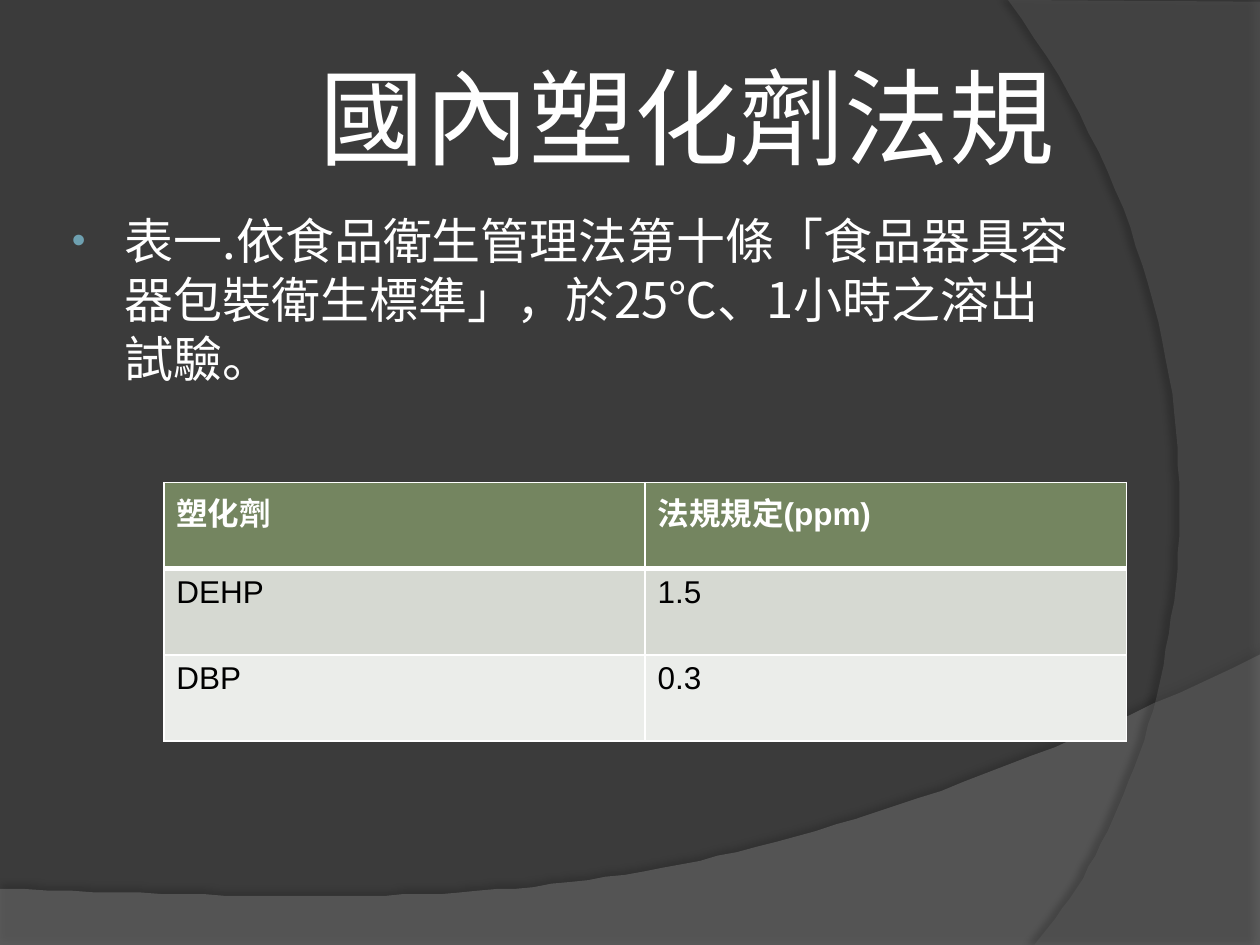
"""Build a slide on domestic plasticizer regulations with a table of limits."""
from lxml import etree
from pptx import Presentation
from pptx.dml.color import RGBColor
from pptx.enum import text
from pptx.oxml import ns
from pptx.util import Pt

CJK_FONT = "Noto Sans CJK SC"
LATIN_FONT = "Arial"
WHITE = RGBColor(0xFF, 0xFF, 0xFF)
BLACK = RGBColor(0, 0, 0)
BACKGROUND = RGBColor(0x3B, 0x3B, 0x3B)
FLOOR = RGBColor(0x7F, 0x7F, 0x7F)
SIDE = RGBColor(0x5E, 0x5E, 0x5E)
BULLET = RGBColor(0x6E, 0xA0, 0xB0)
HEADER = RGBColor(0x74, 0x85, 0x60)
BANDS = [RGBColor(0xD6, 0xD9, 0xD2), RGBColor(0xEB, 0xED, 0xEA)]

TITLE = "國內塑化劑法規"
BODY = "表一.依食品衛生管理法第十條「食品器具容器包裝衛生標準」，於25℃、1小時之溶出試驗。"
LIMITS = [("塑化劑", "法規規定(ppm)"), ("DEHP", "1.5"), ("DBP", "0.3")]


def add_node(parent, tag, **attributes):
    """Append a DrawingML element to a parent."""
    node = etree.SubElement(parent, ns.qn(tag))
    for name, value in attributes.items():
        node.set(name, str(value))
    return node


def curve(start, first, second, end, steps=60):
    """Return points along a cubic curve."""
    points = []
    for step in range(steps + 1):
        t = step / steps
        weights = ((1 - t) ** 3, 3 * t * (1 - t) ** 2, 3 * t * t * (1 - t), t ** 3)
        controls = (start, first, second, end)
        points.append(tuple(sum(w * c[axis] for w, c in zip(weights, controls))
                            for axis in (0, 1)))
    return points


def add_swoosh(page, index, points, color, opacity, shadow):
    """Draw a translucent curved area behind the placeholders."""
    builder = page.shapes.build_freeform(*points[0], scale=float(Pt(1)))
    builder.add_line_segments(points[1:], close=True)
    shape = builder.convert_to_shape()
    shape.fill.solid()
    shape.fill.fore_color.rgb = color
    shape.line.fill.background()
    shape.shadow.inherit = False
    properties = shape.element.spPr
    fill = properties.find(ns.qn("a:solidFill"))
    add_node(fill[0], "a:alpha", val=opacity * 1000)
    shade, blur, distance, angle = shadow
    outer = add_node(properties.find(ns.qn("a:effectLst")), "a:outerShdw",
                     blurRad=Pt(blur), dist=Pt(distance), dir=angle * 60000,
                     algn="ctr", rotWithShape=0)
    add_node(add_node(outer, "a:srgbClr", val=BLACK), "a:alpha", val=shade * 1000)
    shape.element.getparent().insert(2 + index, shape.element)


def style_span(span, font, size, color, bold=False):
    """Format one run, including its East Asian font."""
    span.font.size = Pt(size)
    span.font.bold = bold
    span.font.color.rgb = color
    span.font.name = font
    add_node(span.font._element, "a:ea", typeface=CJK_FONT)


def fill_placeholder(box, place, words, size):
    """Place and format a single-paragraph placeholder."""
    box.left, box.top, box.width, box.height = map(Pt, place)
    frame = box.text_frame
    frame.text = words
    frame.word_wrap = True
    frame.auto_size = text.MSO_AUTO_SIZE.NONE
    para = frame.paragraphs[0]
    style_span(para.runs[0], CJK_FONT, size, WHITE)
    return frame, para


def add_title(page):
    """Write the centred title."""
    frame, para = fill_placeholder(page.shapes.title, (-14.4, 20.9, 813.6, 90), TITLE, 60)
    frame.vertical_anchor = text.MSO_ANCHOR.MIDDLE
    frame.margin_left = frame.margin_right = Pt(3.6)
    para.alignment = text.PP_ALIGN.CENTER


def add_body(page):
    """Write the bulleted statement."""
    frame, para = fill_placeholder(page.placeholders[1], (31, 116.6, 588.2, 356.4), BODY, 28)
    frame.vertical_anchor = text.MSO_ANCHOR.TOP
    properties = para._p.get_or_add_pPr()
    properties.set("marL", str(Pt(33.1)))
    properties.set("indent", str(Pt(-30.2)))
    add_node(add_node(properties, "a:buClr"), "a:srgbClr", val=BULLET)
    add_node(properties, "a:buSzPct", val=80000)
    add_node(properties, "a:buFont", typeface=LATIN_FONT)
    add_node(properties, "a:buChar", char="•")


def style_cell(cell, words, fill, color, header, below_header):
    """Write a table cell with white borders."""
    cell.text = words
    style_span(cell.text_frame.paragraphs[0].runs[0], LATIN_FONT, 18, color, header)
    properties = cell._tc.get_or_add_tcPr()
    widths = {"L": 1, "R": 1, "T": 3 if below_header else 1, "B": 3 if header else 1}
    for side, width in widths.items():
        line = add_node(properties, f"a:ln{side}", w=Pt(width))
        add_node(add_node(line, "a:solidFill"), "a:srgbClr", val=WHITE)
    cell.fill.solid()
    cell.fill.fore_color.rgb = fill


def add_limits_table(page):
    """Add the table of regulated limits."""
    table = page.shapes.add_table(len(LIMITS), 2, Pt(93.6), Pt(275.8),
                                  Pt(550), Pt(147.6)).table
    for row, values in enumerate(LIMITS):
        header = row == 0
        fill = HEADER if header else BANDS[(row - 1) % 2]
        for column, words in enumerate(values):
            style_cell(table.cell(row, column), words, fill,
                       WHITE if header else BLACK, header, row == 1)


def main():
    """Assemble and save the deck."""
    deck = Presentation()
    deck.slide_width, deck.slide_height = Pt(720), Pt(540)
    page = deck.slides.add_slide(deck.slide_layouts[1])
    page.background.fill.solid()
    page.background.fill.fore_color.rgb = BACKGROUND
    floor = curve((720, 374.4), (402.5, 524.9), (281.5, 517.7), (0, 507.6))
    add_swoosh(page, 0, floor + [(0, 540), (720, 540)], FLOOR, 45, (35, 4, 3.5, 270))
    side = curve((591, 540), (673.2, 445.7), (733, 216), (576, 0))
    add_swoosh(page, 1, side + [(720, 1.4), (720, 540)], SIDE, 40, (45, 4, 4, 180))
    add_title(page)
    add_body(page)
    add_limits_table(page)
    deck.save("out.pptx")


if __name__ == "__main__":
    main()
